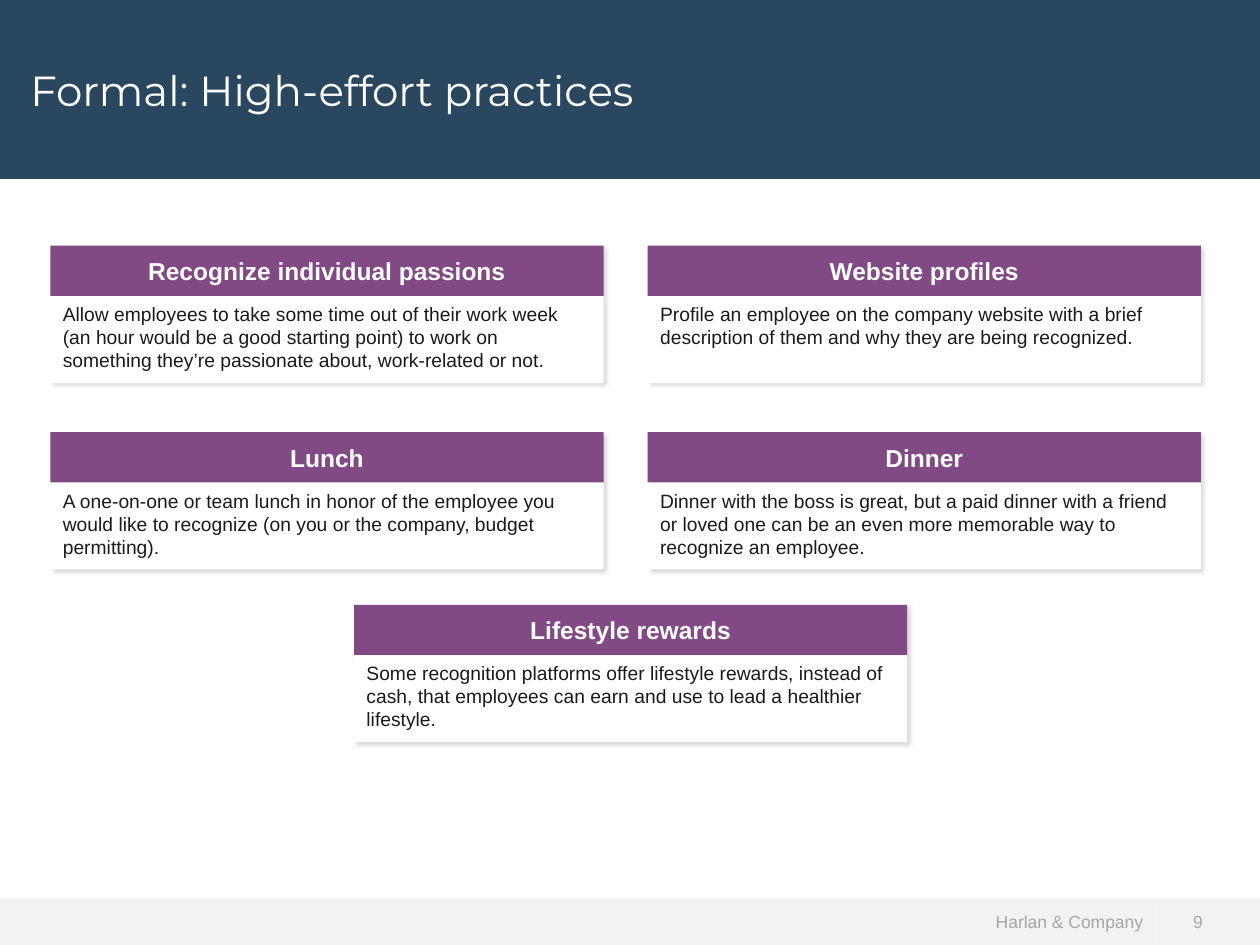
from lxml.etree import SubElement
from pptx import Presentation
from pptx.dml.color import RGBColor
from pptx.enum.shapes import MSO_SHAPE
from pptx.enum.text import MSO_ANCHOR, PP_ALIGN
from pptx.oxml.ns import qn
from pptx.util import Inches, Pt

NAVY = RGBColor(0x29, 0x47, 0x5F)
PURPLE = RGBColor(0x82, 0x4A, 0x85)
WHITE = RGBColor(0xFF, 0xFF, 0xFF)
INK = RGBColor(0x1A, 0x1A, 0x1A)
PALE = RGBColor(0xF2, 0xF2, 0xF2)
GREY = RGBColor(0xA6, 0xA6, 0xA6)

CARD_W, HEAD_H, BODY_H = 4.39, 0.4, 0.69
LEFT, RIGHT, MID = 0.4, 5.14, 2.81

CARDS = [
    (LEFT, 1.95, "Recognize individual passions",
     "Allow employees to take some time out of their work week (an hour would "
     "be a good starting point) to work on something they’re passionate about, "
     "work-related or not."),
    (RIGHT, 1.95, "Website profiles",
     "Profile an employee on the company website with a brief description of "
     "them and why they are being recognized."),
    (LEFT, 3.43, "Lunch",
     "A one-on-one or team lunch in honor of the employee you would like to "
     "recognize (on you or the company, budget permitting)."),
    (RIGHT, 3.43, "Dinner",
     "Dinner with the boss is great, but a paid dinner with a friend or loved "
     "one can be an even more memorable way to recognize an employee."),
    (MID, 4.8, "Lifestyle rewards",
     "Some recognition platforms offer lifestyle rewards, instead of cash, that "
     "employees can earn and use to lead a healthier lifestyle."),
]


class Deck:
    """Holds the text styles and the current slide."""

    styles = {
        "title": {"size": Pt(24), "name": "Montserrat", "bold": False},
        "head": {"size": Pt(14), "name": "Arial", "bold": True},
        "body": {"size": Pt(11), "name": "Arial", "bold": False},
        "foot": {"size": Pt(10), "name": "Arial", "bold": False},
    }
    inks = {"title": WHITE, "head": WHITE, "body": INK, "foot": GREY}

    def __init__(self, slide):
        self.slide = slide

    def label(self, shape, text, style, align, anchor=MSO_ANCHOR.MIDDLE):
        frame = shape.text_frame
        frame.text = text
        frame.word_wrap = True
        frame.vertical_anchor = anchor
        para = frame.paragraphs[0]
        para.alignment = align
        font = para.runs[0].font
        for key, value in self.styles[style].items():
            setattr(font, key, value)
        font.color.rgb = self.inks[style]

    def title(self, text, height):
        shape = self.slide.shapes.title
        place = {"left": 0, "top": 0, "width": Inches(10), "height": Inches(height)}
        for key, value in place.items():
            setattr(shape, key, value)
        shape.fill.solid()
        shape.fill.fore_color.rgb = NAVY
        self.label(shape, text, "title", PP_ALIGN.LEFT)
        shape.text_frame.margin_left = Inches(0.24)

    def box(self, left, top, width, height, fill):
        shape = self.slide.shapes.add_shape(
            MSO_SHAPE.RECTANGLE, Inches(left), Inches(top), Inches(width), Inches(height))
        shape.fill.solid()
        shape.fill.fore_color.rgb = fill
        shape.line.fill.background()
        shape.shadow.inherit = False
        return shape

    def shade(self, shape):
        effects = shape.element.spPr.find(qn("a:effectLst"))
        outer = SubElement(effects, qn("a:outerShdw"), blurRad=str(Pt(2)),
                           dist=str(Pt(2)), dir=str(45 * 60000), algn="tl")
        tint = SubElement(outer, qn("a:srgbClr"), val="000000")
        SubElement(tint, qn("a:alpha"), val="15000")

    def card(self, left, top, head, body):
        strip = self.box(left, top, CARD_W, HEAD_H, PURPLE)
        self.shade(strip)
        self.label(strip, head, "head", PP_ALIGN.CENTER)
        panel = self.box(left, top + HEAD_H, CARD_W, BODY_H, WHITE)
        self.shade(panel)
        self.label(panel, body, "body", PP_ALIGN.LEFT, MSO_ANCHOR.TOP)

    def footer(self, owner, number):
        bar = self.box(0, 7.13, 9.17, 0.37, PALE)
        self.label(bar, owner, "foot", PP_ALIGN.RIGHT)
        page = self.box(9.17, 7.13, 0.83, 0.37, PALE)
        self.label(page, number, "foot", PP_ALIGN.LEFT)
        page.text_frame.margin_left = Inches(0.3)


def main():
    show = Presentation()
    show.slide_width, show.slide_height = Inches(10), Inches(7.5)
    deck = Deck(show.slides.add_slide(show.slide_layouts[5]))

    # Footer band and title band
    deck.footer("Harlan & Company", "9")
    deck.title("Formal: High-effort practices", 1.42)

    # Practice cards
    for card in CARDS:
        deck.card(*card)

    show.save("out.pptx")


if __name__ == "__main__":
    main()
